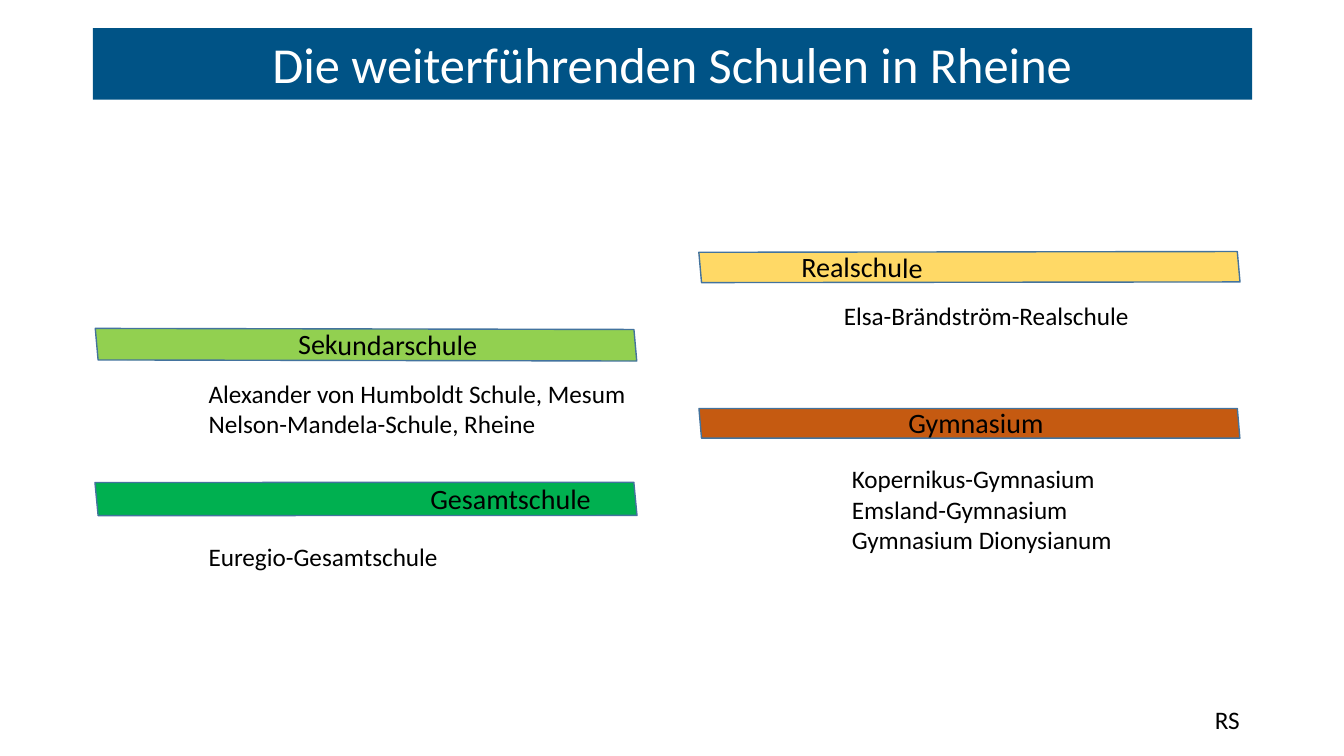
from pptx import Presentation
from pptx.dml.color import RGBColor
from pptx.enum.shapes import MSO_SHAPE as Shape
from pptx.enum.text import MSO_ANCHOR as Anchor, MSO_AUTO_SIZE as AutoSize, PP_ALIGN as Align
from pptx.util import Inches, Pt


def color(hex_value):
    return RGBColor.from_string(hex_value)


def apply_format(target, values):
    for name, value in values.items():
        setattr(target, name, value)


class SchoolSlide:
    FONT = "Calibri"
    TEXT = "000000"
    OUTLINE = "43739E"
    TITLE_FILL = "005386"
    TITLE_TEXT = "FFFFFF"
    BAND_HEIGHT = 5.32
    LABEL_SIZE = 20
    BODY_SIZE = 18

    def __init__(self, presentation):
        self.slide = presentation.slides.add_slide(presentation.slide_layouts[5])

    def fill_frame(self, frame, lines, size, text_color, **paragraph_format):
        frame.text = "\n".join(lines)
        for paragraph in frame.paragraphs:
            apply_format(paragraph, paragraph_format)
            for run in paragraph.runs:
                apply_format(run.font, {"name": self.FONT, "size": Pt(size)})
                run.font.color.rgb = color(text_color)

    def title(self, text, box):
        shape = self.slide.shapes.title
        apply_format(shape, dict(zip(("left", "top", "width", "height"), map(Inches, box))))
        shape.fill.solid()
        shape.fill.fore_color.rgb = color(self.TITLE_FILL)
        apply_format(shape.text_frame, {"vertical_anchor": Anchor.BOTTOM,
                                        "word_wrap": True, "auto_size": AutoSize.NONE})
        self.fill_frame(shape.text_frame, [text], 36, self.TITLE_TEXT,
                        alignment=Align.CENTER, line_spacing=0.9)

    def band(self, left, top, width, rotation, fill):
        """Add a tall parallelogram turned to lie almost flat."""
        shape = self.slide.shapes.add_shape(
            Shape.PARALLELOGRAM, *map(Inches, (left, top, width, self.BAND_HEIGHT)))
        shape.adjustments[0] = 0.607
        shape.rotation = rotation
        shape.shadow.inherit = False
        shape.fill.solid()
        shape.fill.fore_color.rgb = color(fill)
        shape.line.color.rgb = color(self.OUTLINE)
        shape.line.width = Pt(1)

    def text(self, lines, box, size=BODY_SIZE, rotation=0):
        shape = self.slide.shapes.add_textbox(*map(Inches, box))
        shape.rotation = rotation
        apply_format(shape.text_frame, {"word_wrap": True,
                                        "auto_size": AutoSize.SHAPE_TO_FIT_TEXT})
        self.fill_frame(shape.text_frame, lines, size, self.TEXT)

    def school_type(self, name, band, label_box, label_rotation, schools, schools_box):
        self.band(*band)
        self.text([name], label_box, self.LABEL_SIZE, label_rotation)
        self.text(schools, schools_box)


SCHOOL_TYPES = [
    ("Realschule", (9.23, -0.01, 0.77, 84.9, "FFD966"), (7.85, 2.43, 1.53, 0.44), 0.3,
     ["Elsa-Brändström-Realschule"], (8.27, 2.93, 3.85, 0.4)),
    ("Gymnasium", (9.24, 1.54, 0.75, 85.1, "C55A11"), (8.91, 3.97, 1.68, 0.44), 359.8,
     ["Kopernikus-Gymnasium", "Emsland-Gymnasium", "Gymnasium Dionysianum"],
     (8.35, 4.55, 3.67, 1.01)),
    ("Sekundarschule", (3.23, 0.76, 0.8, 84.9, "92D050"), (2.86, 3.2, 2.17, 0.44), 0.4,
     ["Alexander von Humboldt Schule, Mesum", "Nelson-Mandela-Schule, Rheine"],
     (1.97, 3.7, 5.25, 0.71)),
    ("Gesamtschule", (3.21, 2.29, 0.84, 84.5, "00B050"), (4.17, 4.73, 1.97, 0.44), 0.1,
     ["Euregio-Gesamtschule"], (1.97, 5.32, 3.36, 0.4)),
]


def main():
    presentation = Presentation()
    apply_format(presentation, {"slide_width": Inches(13.33), "slide_height": Inches(7.5)})
    slide = SchoolSlide(presentation)
    slide.title("Die weiterführenden Schulen in Rheine", (0.92, 0.28, 11.5, 0.71))
    for school_type in SCHOOL_TYPES:
        slide.school_type(*school_type)
    slide.text(["RS"], (11.95, 6.94, 0.84, 0.4))
    presentation.save("out.pptx")


if __name__ == "__main__":
    main()
